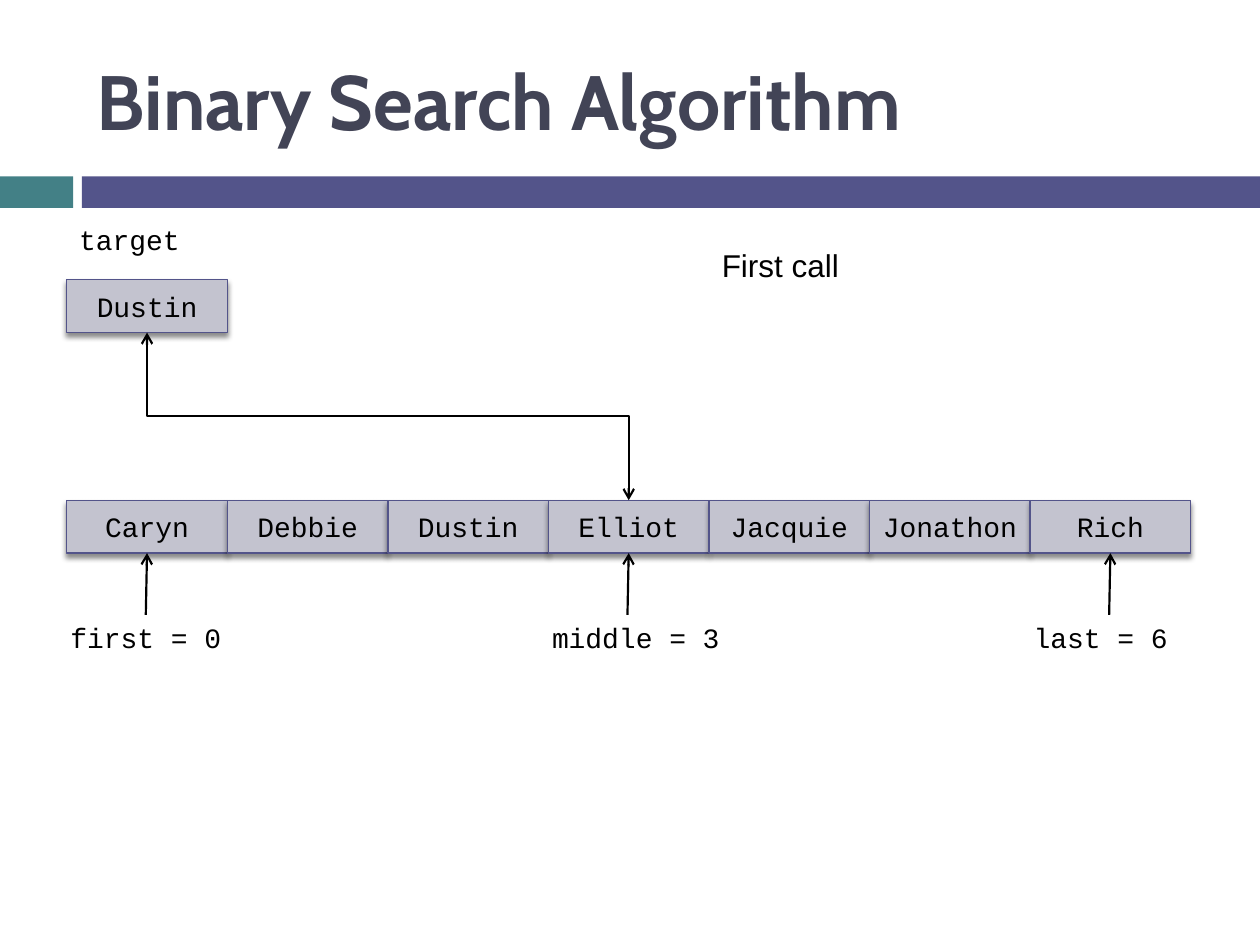
from lxml.etree import SubElement
from pptx import Presentation
from pptx.dml.color import RGBColor
from pptx.enum.shapes import MSO_CONNECTOR, MSO_SHAPE
from pptx.enum.text import MSO_ANCHOR, PP_ALIGN
from pptx.oxml.ns import qn
from pptx.util import Inches, Pt

NAMES = ["Caryn", "Debbie", "Dustin", "Elliot", "Jacquie", "Jonathon", "Rich"]
POINTERS = [("first", 0, 1.42), ("middle", 3, 1.55), ("last", 6, 1.28)]  # name, index, label width
LEFT, ROW_WIDTH = 0.53, 8.92
CELL_W, CELL_H = ROW_WIDTH / len(NAMES), 0.42
MONO = "Courier New"


def rgb(color):
    return RGBColor.from_string(color)


def add_run(p, text, size, font, color="000000", bold=False):
    r = p.add_run()
    r.text = text
    r.font.size = Pt(size)
    r.font.name = font
    r.font.bold = bold
    r.font.color.rgb = rgb(color)


def add_text(s, x, y, w, h, text, size=16, font=MONO, wrap=False, **style):
    tb = s.shapes.add_textbox(Inches(x), Inches(y), Inches(w), Inches(h))
    tf = tb.text_frame
    tf.word_wrap = wrap
    add_run(tf.paragraphs[0], text, size, font, **style)
    return tb


def add_rect(s, x, y, w, h, fill):
    sp = s.shapes.add_shape(MSO_SHAPE.RECTANGLE, Inches(x), Inches(y), Inches(w), Inches(h))
    sp.shadow.inherit = False
    sp.fill.solid()
    sp.fill.fore_color.rgb = rgb(fill)
    sp.line.fill.background()
    return sp


def add_drop_shadow(sp):
    effects = sp._element.spPr.find(qn("a:effectLst"))
    shadow = SubElement(effects, qn("a:outerShdw"), blurRad=str(Pt(3)), dist=str(Pt(2.4)),
                        dir="5400000", rotWithShape="0")
    color = SubElement(shadow, qn("a:srgbClr"), val="000000")
    SubElement(color, qn("a:alpha"), val="45000")


def add_cell(s, x, y, text):
    sp = add_rect(s, x, y, CELL_W, CELL_H, "C3C3CF")
    sp.line.color.rgb = rgb("53548A")
    sp.line.width = Pt(0.79)
    add_drop_shadow(sp)
    tf = sp.text_frame
    tf.word_wrap = False
    tf.vertical_anchor = MSO_ANCHOR.MIDDLE
    p = tf.paragraphs[0]
    p.alignment = PP_ALIGN.CENTER
    add_run(p, text, 16, MONO)
    return sp


def add_arrow(s, kind, x1, y1, x2, y2, ends=("tailEnd",)):
    cxn = s.shapes.add_connector(kind, Inches(x1), Inches(y1), Inches(x2), Inches(y2))
    cxn.line.color.rgb = rgb("000000")
    cxn.line.width = Pt(1.25)
    ln = cxn.line._get_or_add_ln()
    for end in ends:
        SubElement(ln, qn(f"a:{end}"), type="arrow")
    SubElement(cxn._element.spPr, qn("a:effectLst"))
    return cxn


def add_header(s):
    add_rect(s, 0, 1.4, 0.58, 0.25, "438086")
    add_rect(s, 0.65, 1.4, 9.35, 0.25, "53548A")
    title = add_text(s, 0.67, 0.25, 8.92, 1.08, "Binary Search Algorithm", 44, "Cabin",
                     wrap=True, color="424456", bold=True)
    title.text_frame.vertical_anchor = MSO_ANCHOR.MIDDLE


def add_target(s, x, y):
    add_text(s, x, y - 0.5, 1.01, 0.37, "target")
    add_cell(s, x, y, "Dustin")


def add_array(s, x, y):
    cells = [add_cell(s, x + i * CELL_W, y, name) for i, name in enumerate(NAMES)]
    label_y = y + 0.91
    for name, index, label_w in POINTERS:
        cell_x = x + index * CELL_W
        center = cell_x + CELL_W / 2
        arrow = add_arrow(s, MSO_CONNECTOR.STRAIGHT, center - 0.01, label_y, center, y + CELL_H)
        arrow.end_connect(cells[index], 2)
        label = add_text(s, cell_x - 0.07, label_y, label_w, 0.37, f"{name} = {index}")
        label.text_frame.margin_right = 0


def add_comparison(s, x1, y1, x2, y2):
    """Double-headed elbow that leaves and arrives vertically: a flipped elbow turned by 270°."""
    cx, cy = (x1 + x2) / 2, (y1 + y2) / 2
    half_w, half_h = (y2 - y1) / 2, (x2 - x1) / 2
    cxn = add_arrow(s, MSO_CONNECTOR.ELBOW, cx + half_w, cy - half_h, cx - half_w, cy + half_h,
                    ends=("headEnd", "tailEnd"))
    cxn._element.spPr.find(qn("a:xfrm")).set("rot", "16200000")


def main():
    prs = Presentation()
    prs.slide_width, prs.slide_height = Inches(10), Inches(7.5)
    s = prs.slides.add_slide(prs.slide_layouts[6])
    target_y, array_y = 2.22, 3.97
    add_header(s)
    add_array(s, LEFT, array_y)
    add_target(s, LEFT, target_y)
    add_comparison(s, LEFT + CELL_W / 2, target_y + CELL_H, LEFT + 3.5 * CELL_W, array_y)
    add_text(s, 5.63, 1.9, 3.12, 0.4, "First call", 18, "Arial", wrap=True)
    prs.save("out.pptx")


if __name__ == "__main__":
    main()
